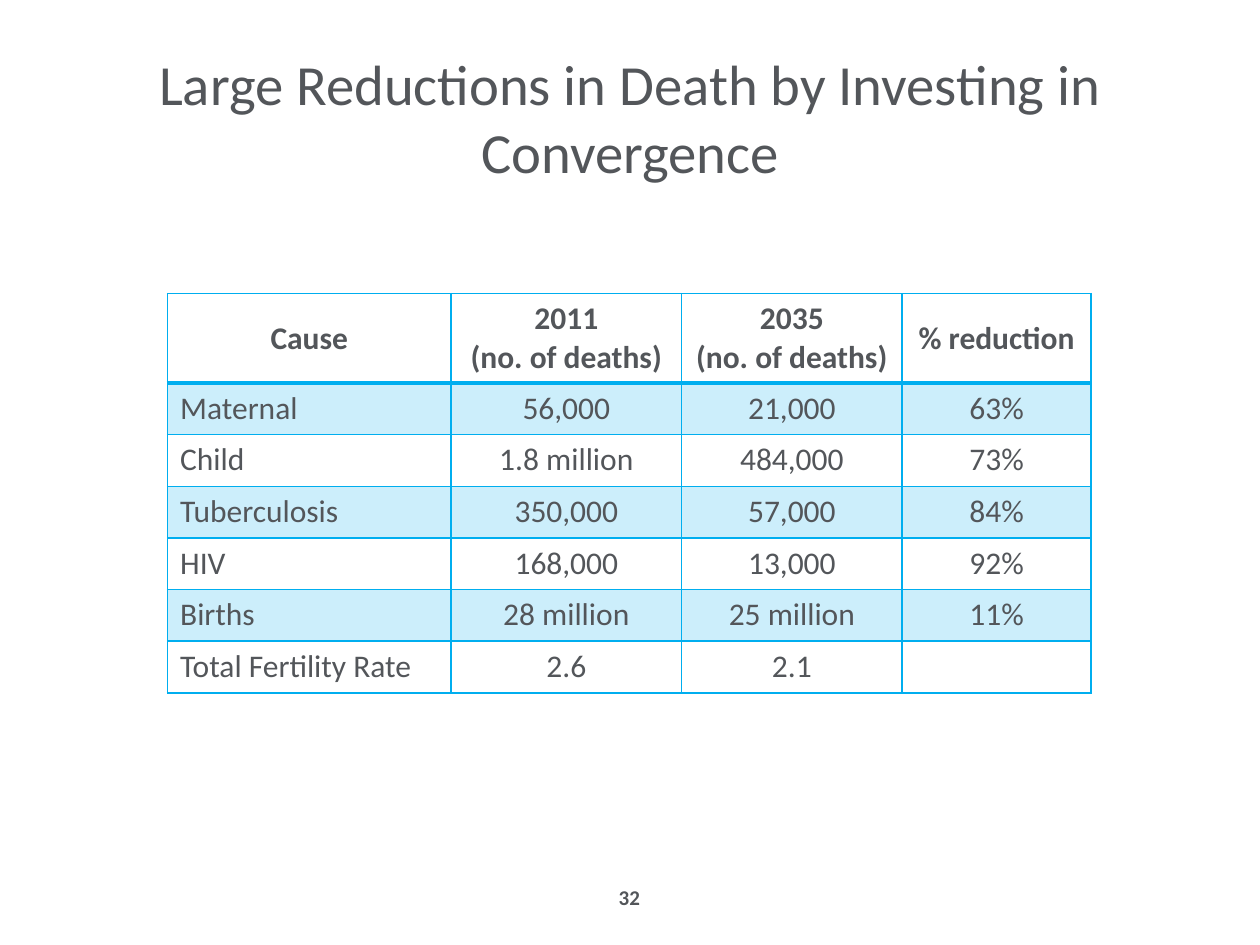
from lxml import etree
from pptx import Presentation
from pptx import util as u
from pptx.dml.color import RGBColor
from pptx.enum import text
from pptx.oxml import ns

COLORS = {"text": "53565A", "accent": "00AEEF"}
BAND_ALPHA = 20
COLUMN_WIDTHS = [2.25, 1.83, 1.75, 1.5]
HEADER_HEIGHT, ROW_HEIGHT = 0.71, 0.41
DEATHS = [
    ["Cause", "2011\n(no. of deaths)", "2035\n(no. of deaths)", "% reduction"],
    ["Maternal", "56,000", "21,000", "63%"],
    ["Child", "1.8 million", "484,000", "73%"],
    ["Tuberculosis", "350,000", "57,000", "84%"],
    ["HIV", "168,000", "13,000", "92%"],
    ["Births", "28 million", "25 million", "11%"],
    ["Total Fertility Rate", "2.6", "2.1", ""],
]


class SlideBuilder:
    """Holds the style and the current slide."""

    def __init__(self, slide, font_name="Calibri"):
        self.slide = slide
        self.font_name = font_name

    def set_text(self, frame, content, align, size, bold=False):
        font_format = {"name": self.font_name, "size": u.Pt(size), "bold": bold}
        frame.text = content
        for paragraph in frame.paragraphs:
            paragraph.alignment = align
            for run in paragraph.runs:
                for name, value in font_format.items():
                    setattr(run.font, name, value)
                run.font.color.rgb = RGBColor.from_string(COLORS["text"])

    def text_box(self, box, content, size, bold=False):
        shape = self.slide.shapes.add_textbox(*map(u.Inches, box))
        frame = shape.text_frame
        frame.word_wrap = True
        frame.vertical_anchor = text.MSO_ANCHOR.MIDDLE
        self.set_text(frame, content, text.PP_ALIGN.CENTER, size, bold)

    def borders(self, cell, bottom_width):
        properties = cell._tc.get_or_add_tcPr()
        for side, width in {"L": 1, "R": 1, "T": 1, "B": bottom_width}.items():
            line = etree.SubElement(properties, ns.qn(f"a:ln{side}"), w=str(u.Pt(width)))
            fill = etree.SubElement(line, ns.qn("a:solidFill"))
            etree.SubElement(fill, ns.qn("a:srgbClr"), val=COLORS["accent"])

    def cell_fill(self, cell, banded):
        if not banded:
            cell.fill.background()
            return
        cell.fill.solid()
        cell.fill.fore_color.rgb = RGBColor.from_string(COLORS["accent"])
        color = cell._tc.tcPr.find(ns.qn("a:solidFill")).find(ns.qn("a:srgbClr"))
        etree.SubElement(color, ns.qn("a:alpha"), val=str(BAND_ALPHA * 1000))

    def table(self, left, top, rows, widths, size):
        heights = [HEADER_HEIGHT] + [ROW_HEIGHT] * (len(rows) - 1)
        box = (left, top, sum(widths), sum(heights))
        table = self.slide.shapes.add_table(
            len(rows), len(widths), *map(u.Inches, box)).table
        table.first_row = table.horz_banding = False
        for column, width in zip(table.columns, widths):
            column.width = u.Inches(width)
        for i, (row, height) in enumerate(zip(rows, heights)):
            table.rows[i].height = u.Inches(height)
            header = i == 0
            for j, content in enumerate(row):
                cell = table.cell(i, j)
                centred = header or j > 0
                align = text.PP_ALIGN.CENTER if centred else text.PP_ALIGN.LEFT
                self.set_text(cell.text_frame, content, align, size, header)
                if header:
                    cell.vertical_anchor = text.MSO_ANCHOR.MIDDLE
                self.borders(cell, 2 if header else 1)
                self.cell_fill(cell, i % 2 == 1)


def main():
    presentation = Presentation()
    presentation.slide_width, presentation.slide_height = u.Inches(10), u.Inches(7.5)
    builder = SlideBuilder(presentation.slides.add_slide(presentation.slide_layouts[6]))

    # Title
    builder.text_box((0.5, 0.3, 9, 1.25),
                     "Large Reductions in Death by Investing in Convergence", 32.4)
    # Deaths by cause
    builder.table(1.33, 2.33, DEATHS, COLUMN_WIDTHS, 18)
    # Page number
    builder.text_box((3.83, 6.92, 2.33, 0.4), "32", 12, bold=True)

    presentation.save("out.pptx")


if __name__ == "__main__":
    main()
